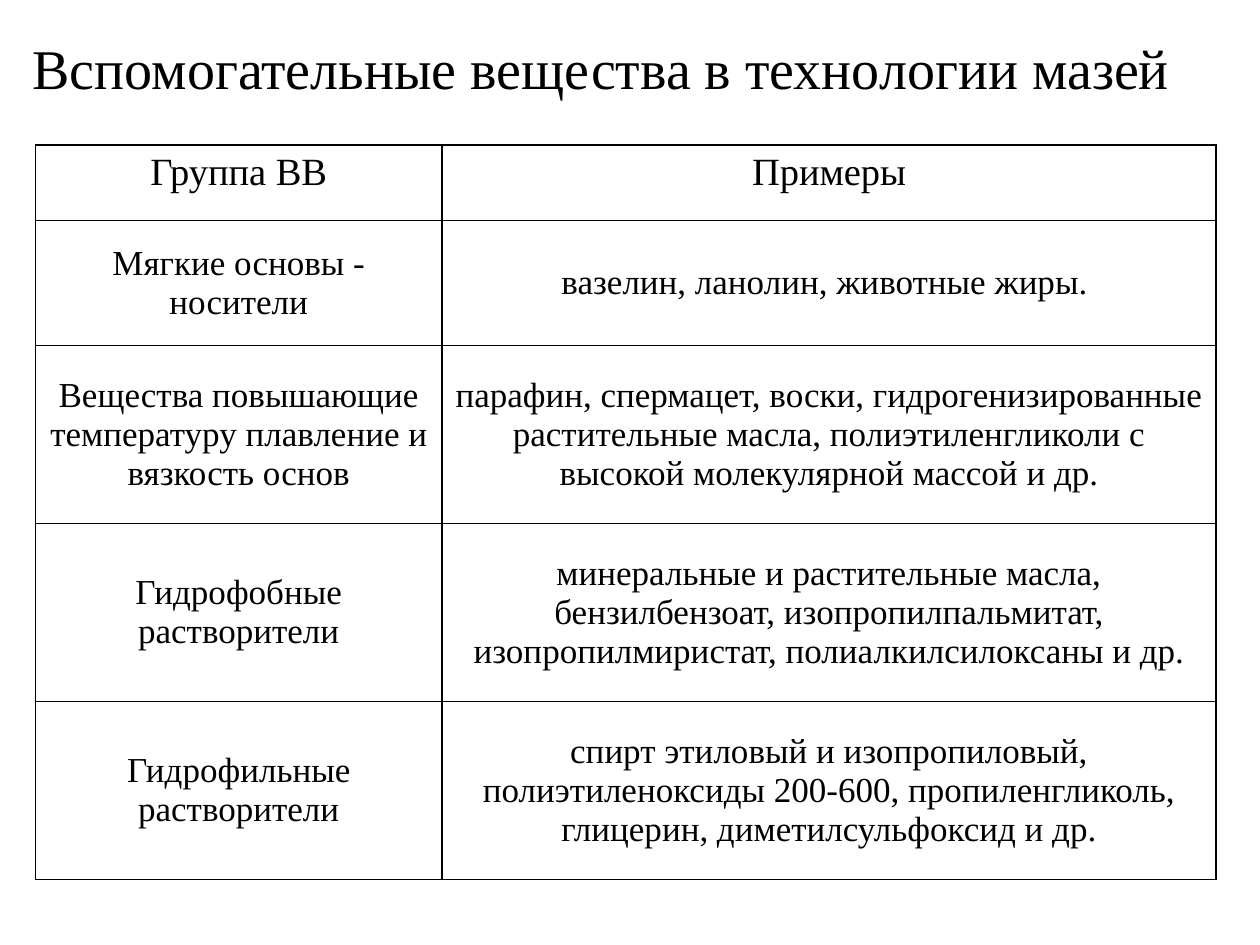
from lxml.etree import SubElement
from pptx import Presentation
from pptx.dml.color import RGBColor
from pptx.enum.text import MSO_ANCHOR as Anchor, PP_ALIGN as Align
from pptx.oxml.ns import qn
from pptx.util import Inches, Pt

COLORS = {"text": "000000", "border": "000000"}
FONT = "Times New Roman"
COLUMN_WIDTHS = [3.23, 6.14]
ROW_HEIGHTS = [0.6, 0.99, 1.41, 1.41, 1.41]
ROWS = [
    ("Группа ВВ", "Примеры"),
    ("Мягкие основы - носители", "вазелин, ланолин, животные жиры. "),
    ("Вещества повышающие температуру плавление и вязкость основ",
     "парафин, спермацет, воски, гидрогенизированные растительные масла, "
     "полиэтиленгликоли с высокой молекулярной массой и др."),
    ("Гидрофобные растворители",
     "минеральные и растительные масла, бензилбензоат, изопропилпальмитат, "
     "изопропилмиристат, полиалкилсилоксаны и др."),
    ("Гидрофильные растворители",
     "спирт этиловый и изопропиловый, полиэтиленоксиды 200-600, "
     "пропиленгликоль, глицерин, диметилсульфоксид и др."),
]


def add_text(paragraph, text, size):
    run = paragraph.add_run()
    run.text = text
    run.font.name = FONT
    run.font.size = Pt(size)
    run.font.color.rgb = RGBColor.from_string(COLORS["text"])


def set_borders(cell):
    properties = cell._tc.get_or_add_tcPr()
    for side in ("a:lnL", "a:lnR", "a:lnT", "a:lnB"):
        line = SubElement(properties, qn(side), w=str(Pt(1)))
        fill = SubElement(line, qn("a:solidFill"))
        SubElement(fill, qn("a:srgbClr"), val=COLORS["border"])


def add_title(slide, left, top, width, height):
    shape = slide.shapes.add_textbox(left, top, width, height)
    frame = shape.text_frame
    frame.word_wrap = True
    frame.vertical_anchor = Anchor.MIDDLE
    paragraph = frame.paragraphs[0]
    paragraph.line_spacing = 0.9
    add_text(paragraph, "Вспомогательные вещества в технологии мазей", 32)


def add_substances_table(slide, left, top, width, height):
    table = slide.shapes.add_table(
        len(ROWS), len(COLUMN_WIDTHS), left, top, width, height).table
    table.first_row = False
    table.horz_banding = False
    for column, share in zip(table.columns, COLUMN_WIDTHS):
        column.width = int(width * share / sum(COLUMN_WIDTHS))
    for index, (row, share) in enumerate(zip(table.rows, ROW_HEIGHTS)):
        row.height = int(height * share / sum(ROW_HEIGHTS))
        is_header = index == 0
        for cell, text in zip(row.cells, ROWS[index]):
            set_borders(cell)
            cell.fill.background()
            cell.vertical_anchor = Anchor.TOP if is_header else Anchor.MIDDLE
            paragraph = cell.text_frame.paragraphs[0]
            paragraph.alignment = Align.CENTER
            add_text(paragraph, text, 22 if is_header else 20)


def main():
    presentation = Presentation()
    presentation.slide_width = Inches(10)
    presentation.slide_height = Inches(7.5)
    slide = presentation.slides.add_slide(presentation.slide_layouts[6])
    add_title(slide, Inches(0.16), Inches(0.13), Inches(9.61), Inches(0.87))
    add_substances_table(
        slide, Inches(0.28), Inches(1.15), Inches(9.37), Inches(5.83))
    presentation.save("out.pptx")


if __name__ == "__main__":
    main()
